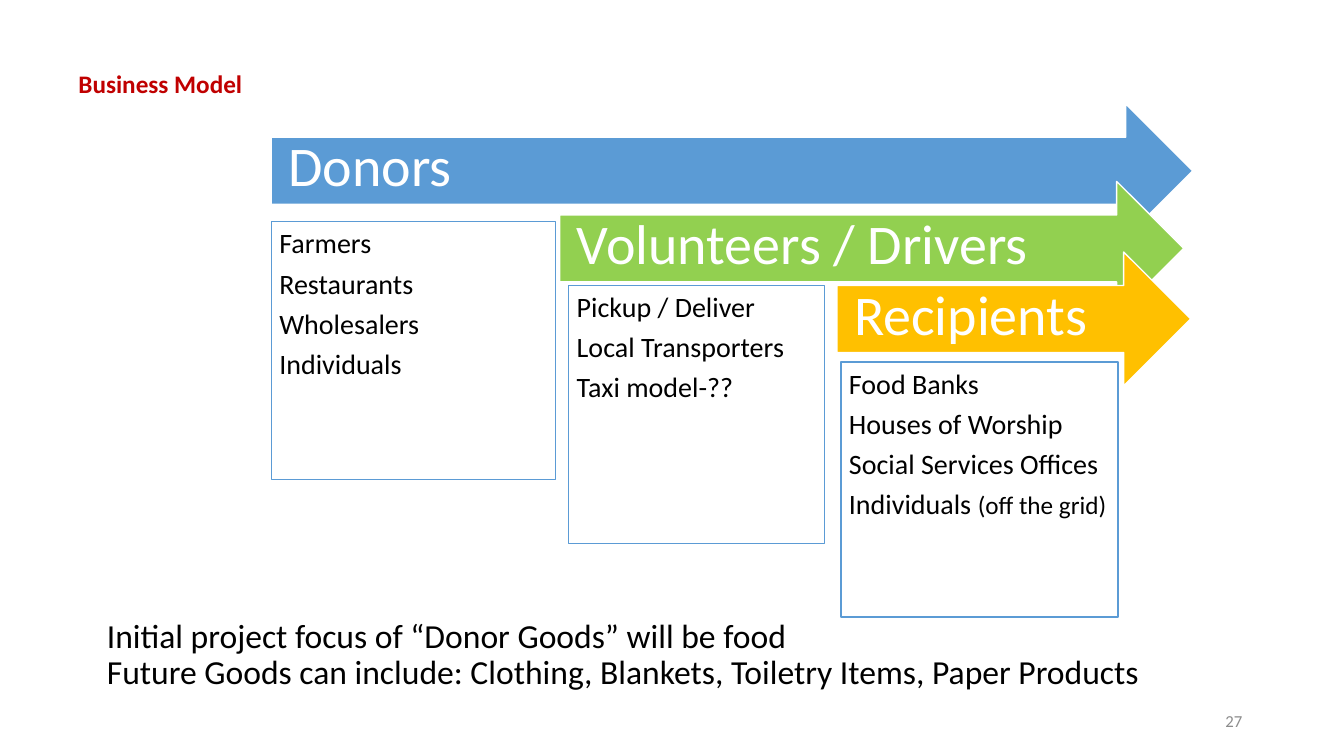
"""Build the business model slide with three stepped arrows and their lists."""
from dataclasses import dataclass

from lxml import etree
from pptx import Presentation
from pptx.dml.color import RGBColor
from pptx.enum.shapes import MSO_SHAPE
from pptx.enum.text import MSO_ANCHOR, MSO_AUTO_SIZE, PP_ALIGN
from pptx.oxml.ns import qn
from pptx.util import Inches, Pt

ARROW, RECT = MSO_SHAPE.RIGHT_ARROW, MSO_SHAPE.RECTANGLE
TOP, MIDDLE = MSO_ANCHOR.TOP, MSO_ANCHOR.MIDDLE
LEFT, RIGHT = PP_ALIGN.LEFT, PP_ALIGN.RIGHT
FIXED = MSO_AUTO_SIZE.NONE


@dataclass(frozen=True)
class Theme:
    """Colours, font and type sizes of the slide."""
    font: str = "Calibri"
    black: str = "000000"
    white: str = "FFFFFF"
    gray: str = "8C8C8C"
    red: str = "C00000"
    blue: str = "5B9BD5"
    green: str = "92D050"
    gold: str = "FFC000"
    stage: int = 40
    title: int = 24
    item: int = 20
    small: int = 18
    page: int = 12


class Board:
    """Draw styled elements on one slide."""

    def __init__(self, deck, theme):
        """Add a title-only slide to the deck."""
        self.theme = theme
        self.slide = deck.slides.add_slide(deck.slide_layouts[5])

    def style(self, para, size, color, bold=False, align=LEFT):
        """Format a paragraph and its runs."""
        para.alignment = align
        for run in para.runs:
            font = run.font
            font.name, font.size, font.bold = self.theme.font, Pt(size), bold
            font.color.rgb = RGBColor.from_string(color)

    def title(self, text, area):
        """Place the title, with its line breaks at text size."""
        shape = self.slide.shapes.title
        shape.left, shape.top, shape.width, shape.height = map(Inches, area)
        frame = shape.text_frame
        frame.text = text
        frame.auto_size, frame.vertical_anchor = FIXED, MIDDLE
        para = frame.paragraphs[0]
        para.line_spacing = 0.9
        para.space_before = Pt(0)
        self.style(para, self.theme.title, self.theme.black)
        for mark in para._p.findall(qn("a:br")):
            etree.SubElement(mark, qn("a:rPr"), sz=str(self.theme.title * 100))

    def label(self, text, area, size, color, bold=False, align=LEFT, anchor=TOP):
        """Add a plain line of text."""
        frame = self.slide.shapes.add_textbox(*map(Inches, area)).text_frame
        frame.word_wrap, frame.vertical_anchor = True, anchor
        frame.text = text
        self.style(frame.paragraphs[0], size, color, bold, align)

    def block(self, kind, area, fill, line, pads, anchor):
        """Add a filled shape and return its text frame."""
        shape = self.slide.shapes.add_shape(kind, *map(Inches, area))
        shape.shadow.inherit = False
        shape.fill.solid()
        shape.fill.fore_color.rgb = RGBColor.from_string(fill)
        shape.line.color.rgb = RGBColor.from_string(line)
        shape.line.width = Pt(1)
        frame = shape.text_frame
        frame.word_wrap, frame.vertical_anchor = True, anchor
        (frame.margin_left, frame.margin_top,
         frame.margin_right, frame.margin_bottom) = map(Inches, pads)
        return frame

    def arrow(self, text, area, fill):
        """Add a stage arrow with its name."""
        theme = self.theme
        frame = self.block(ARROW, area, fill, theme.white,
                           (0.17, 0.17, 0.28, 0.21), MIDDLE)
        frame.text = text
        para = frame.paragraphs[0]
        para.line_spacing = 0.9
        self.style(para, theme.stage, theme.white)

    def items(self, lines, area, note=""):
        """Add a framed list, with an optional small note on its last line."""
        theme = self.theme
        frame = self.block(RECT, area, theme.white, theme.blue, (0.08,) * 4, TOP)
        frame.text = "\n".join(lines)
        last = frame.paragraphs[-1]
        if note:
            last.add_run().text = note
        for para in frame.paragraphs:
            para.line_spacing = 0.9
            para.space_after = Pt(theme.item * 0.35)
            self.style(para, theme.item, theme.black)
        if note:
            last.runs[-1].font.size = Pt(theme.small)


def main():
    """Compose the slide and save it."""
    deck = Presentation()
    deck.slide_width, deck.slide_height = Inches(13.33), Inches(7.5)
    theme = Theme()
    board = Board(deck, theme)
    board.title("Initial project focus of “Donor Goods” will be food\v"
                "Future Goods can include: Clothing, Blankets, "
                "Toiletry Items, Paper Products", (0.96, 5.78, 11.5, 1.45))
    board.label("27", (9.42, 6.95, 3, 0.4), theme.page, theme.gray,
                align=RIGHT, anchor=MIDDLE)
    stages = [
        ("Donors", theme.blue, (2.69, 1.03, 9.14, 1.33),
         ["Farmers", "Restaurants", "Wholesalers", "Individuals"],
         (2.69, 2.2, 2.82, 2.56), ""),
        ("Volunteers / Drivers", theme.green, (5.55, 1.8, 6.19, 1.33),
         ["Pickup / Deliver", "Local Transporters", "Taxi model-??"],
         (5.64, 2.83, 2.54, 2.56), ""),
        ("Recipients", theme.gold, (8.3, 2.5, 3.51, 1.33),
         ["Food Banks", "Houses of Worship", "Social Services Offices",
          "Individuals "],
         (8.34, 3.59, 2.75, 2.53), "(off the grid)"),
    ]
    for name, fill, place, lines, area, note in stages:
        board.arrow(name, place, fill)
        board.items(lines, area, note)
    board.label("Business Model", (0.68, 0.63, 4.34, 0.4),
                theme.small, theme.red, bold=True)
    deck.save("out.pptx")


if __name__ == "__main__":
    main()
